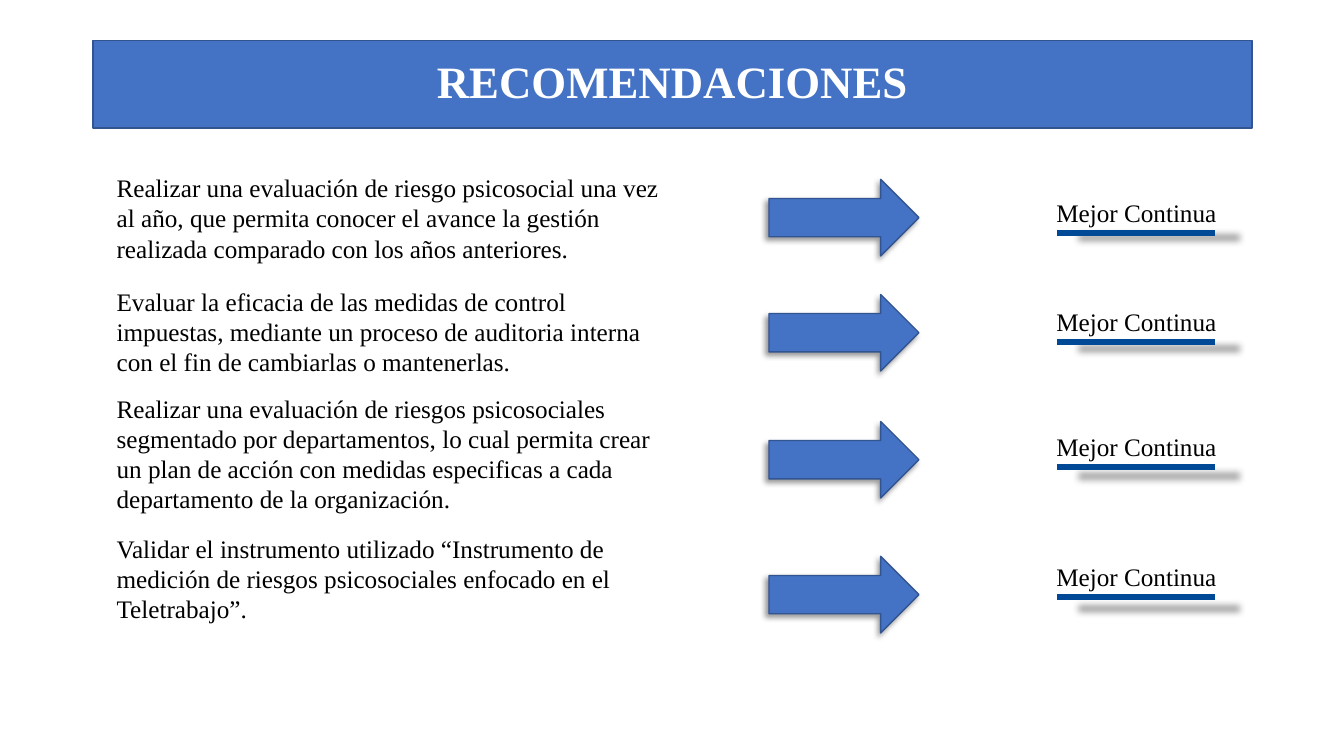
import pptx
import pptx.util
import pptx.dml.color
import pptx.enum.shapes
import pptx.enum.text
import pptx.oxml
import pptx.oxml.ns

Cm, Pt = pptx.util.Cm, pptx.util.Pt
RGBColor = pptx.dml.color.RGBColor
Shape = pptx.enum.shapes.MSO_SHAPE
Anchor = pptx.enum.text.MSO_ANCHOR
Align = pptx.enum.text.PP_ALIGN

BLUE = RGBColor(0x44, 0x72, 0xC4)
EDGE = RGBColor(0x32, 0x54, 0x91)
NAVY = RGBColor(0x00, 0x49, 0x96)
BLACK = RGBColor(0, 0, 0)
WHITE = RGBColor(255, 255, 255)


def write(frame, text, size=18, color=BLACK, bold=False, align=Align.LEFT, space=1.0, wrap=True):
    frame.word_wrap = wrap
    para = frame.paragraphs[0]
    para.alignment = align
    para.line_spacing = space
    run = para.add_run()
    run.text = text
    font = run.font
    font.name, font.size, font.bold = "Times New Roman", Pt(size), bold
    font.color.rgb = color


def shade(shape, blur, dist=0, angle=0, scale=100):
    """Give the shape an outer shadow, black at 40 %."""
    props = shape._element.spPr
    for old in props.findall(pptx.oxml.ns.qn("a:effectLst")):
        props.remove(old)
    props.append(pptx.oxml.parse_xml(
        f'<a:effectLst {pptx.oxml.ns.nsdecls("a")}>'
        f'<a:outerShdw blurRad="{Pt(blur)}" dist="{Pt(dist)}" dir="{angle * 60000}" '
        f'sx="{scale * 1000}" sy="{scale * 1000}" algn="ctr" rotWithShape="0">'
        '<a:srgbClr val="000000"><a:alpha val="40000"/></a:srgbClr>'
        '</a:outerShdw></a:effectLst>'))


class Deck:
    def __init__(self):
        self.show = pptx.Presentation()
        self.show.slide_width, self.show.slide_height = Cm(33.87), Cm(19.05)
        self.slide = self.show.slides.add_slide(self.show.slide_layouts[6])

    def block(self, kind, left, top, width, height):
        shape = self.slide.shapes.add_shape(kind, Cm(left), Cm(top), Cm(width), Cm(height))
        shape.shadow.inherit = False
        shape.fill.solid()
        shape.fill.fore_color.rgb = BLUE
        shape.line.color.rgb = EDGE
        shape.line.width = Pt(1)
        return shape

    def title(self, text):
        frame = self.block(Shape.RECTANGLE, 2.34, 1.02, 29.21, 2.21).text_frame
        frame.vertical_anchor = Anchor.MIDDLE
        write(frame, text, size=32, color=WHITE, bold=True, align=Align.CENTER, space=0.9)

    def text(self, text, left, top, width, height, **style):
        box = self.slide.shapes.add_textbox(Cm(left), Cm(top), Cm(width), Cm(height))
        write(box.text_frame, text, **style)

    def arrow(self, top):
        shade(self.block(Shape.RIGHT_ARROW, 19.38, top, 3.78, 1.93), blur=4, dist=3, angle=135)

    def rule(self, y):
        line = self.slide.shapes.add_connector(
            pptx.enum.shapes.MSO_CONNECTOR.STRAIGHT, Cm(30.63), Cm(y), Cm(26.64), Cm(y))
        line.line.color.rgb = NAVY
        line.line.width = Pt(4.5)
        shade(line, blur=5, scale=102)


# Each row: advice, its top and height, arrow top, label top
ROWS = [
    ("Realizar una evaluación de riesgo psicosocial una vez al año, que permita conocer "
     "el avance la gestión realizada comparado con los años anteriores.",
     4.22, 2.57, 4.52, 4.85),
    ("Evaluar la eficacia de las medidas de control impuestas, mediante un proceso de "
     "auditoria interna con el fin de cambiarlas o mantenerlas.",
     7.09, 2.57, 7.42, 7.59),
    ("Realizar una evaluación de riesgos psicosociales segmentado por departamentos, lo cual "
     "permita crear un plan de acción con medidas especificas a cada departamento de la "
     "organización.",
     9.78, 3.33, 10.62, 10.74),
    ("Validar el instrumento utilizado “Instrumento de medición de riesgos psicosociales "
     "enfocado en el Teletrabajo”.",
     13.31, 2.57, 14.02, 14.02),
]


def main():
    deck = Deck()
    deck.title("RECOMENDACIONES")

    # Advice, arrow and underlined goal
    for advice, top, height, tip, goal in ROWS:
        deck.text(advice, 2.69, top, 14.25, height)
        deck.arrow(tip)
        deck.text("Mejor Continua", 26.37, goal, 4.55, 1.02, wrap=False)
        deck.rule(goal + 1.02)

    deck.show.save("out.pptx")


if __name__ == "__main__":
    main()
